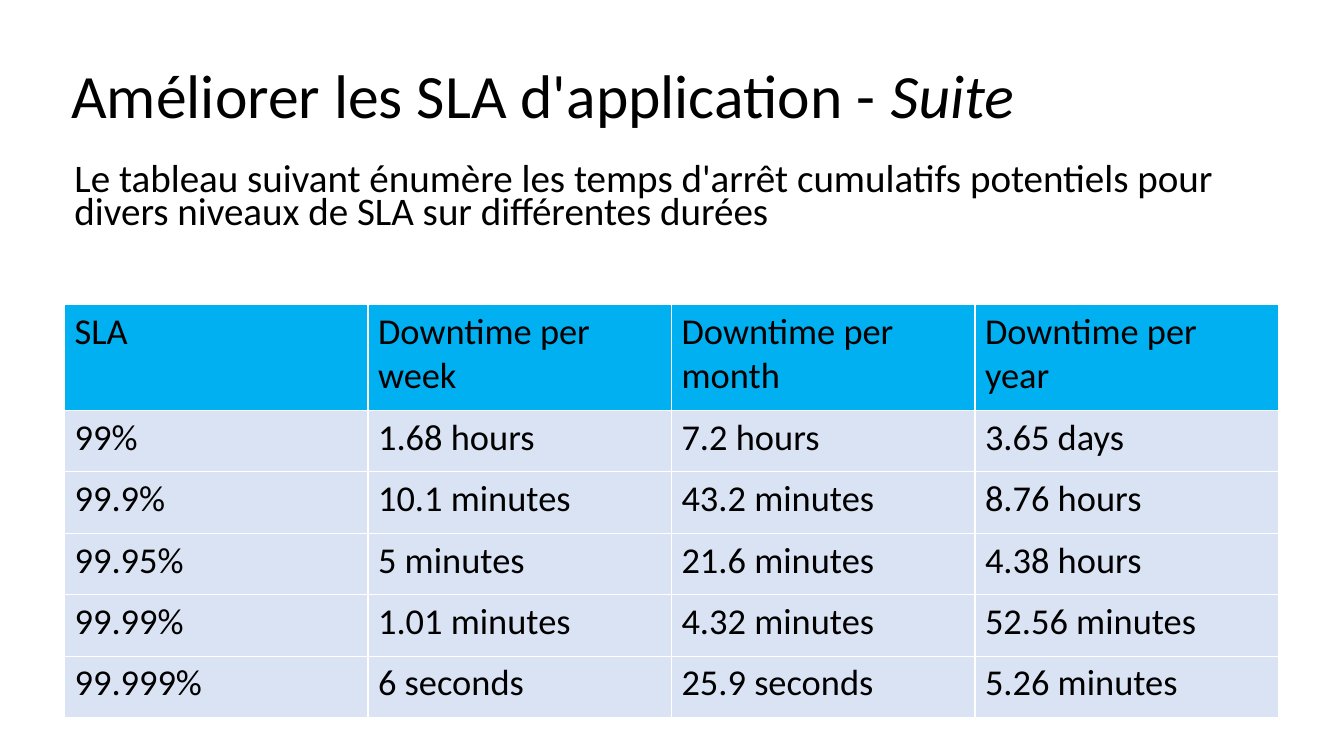
from dataclasses import dataclass

from pptx import Presentation
from pptx.dml.color import RGBColor
from pptx.enum.text import MSO_ANCHOR
from pptx.util import Inches, Pt

TITLE = [("Améliorer les SLA d'application - ", False), ("Suite", True)]
INTRO = [("Le tableau suivant énumère les temps d'arrêt cumulatifs potentiels "
          "pour divers niveaux de SLA sur différentes durées", False)]
ROWS = [
    ("SLA", "Downtime per week", "Downtime per month", "Downtime per year"),
    ("99%", "1.68 hours", "7.2 hours", "3.65 days"),
    ("99.9%", "10.1 minutes", "43.2 minutes", "8.76 hours"),
    ("99.95%", "5 minutes", "21.6 minutes", "4.38 hours"),
    ("99.99%", "1.01 minutes", "4.32 minutes", "52.56 minutes"),
    ("99.999%", "6 seconds", "25.9 seconds", "5.26 minutes"),
]


@dataclass(frozen=True)
class Theme:
    font: str = "Calibri"
    ink: str = "000000"
    head: str = "00B0F0"
    body: str = "DAE3F3"
    title: float = 44
    intro: float = 27.9
    cell: float = 26


THEME = Theme()
WIDE, HIGH = 13.33, 7.5
LEFT, TOP = 0.64, 3.02
TABLE_WIDE = 12.04
HEAD_HIGH, ROW_HIGH = 1.05, 0.61


def write(frame, runs, size, spacing=1.0, before=0, anchor=MSO_ANCHOR.TOP):
    """Fill a text frame with one paragraph of (text, italic) runs."""
    frame.word_wrap = True
    frame.vertical_anchor = anchor
    para = frame.paragraphs[0]
    para.line_spacing = spacing
    para.space_before = Pt(before)
    for text, italic in runs:
        run = para.add_run()
        run.text = text
        font = run.font
        font.name, font.size = THEME.font, Pt(size)
        font.bold, font.italic = False, italic
        font.color.rgb = RGBColor.from_string(THEME.ink)


def add_text(slide, box, runs, size, **style):
    shape = slide.shapes.add_textbox(*map(Inches, box))
    write(shape.text_frame, runs, size, **style)


def add_grid(slide):
    """Add the table; its style draws the white rules between cells."""
    high = HEAD_HIGH + ROW_HIGH * (len(ROWS) - 1)
    box = map(Inches, (LEFT, TOP, TABLE_WIDE, high))
    table = slide.shapes.add_table(len(ROWS), len(ROWS[0]), *box).table
    table.horz_banding = False
    for r, row in enumerate(ROWS):
        table.rows[r].height = Inches(ROW_HIGH if r else HEAD_HIGH)
        for c, text in enumerate(row):
            cell = table.cell(r, c)
            cell.fill.solid()
            shade = THEME.body if r else THEME.head
            cell.fill.fore_color.rgb = RGBColor.from_string(shade)
            write(cell.text_frame, [(text, False)], THEME.cell)


def main():
    deck = Presentation()
    deck.slide_width, deck.slide_height = Inches(WIDE), Inches(HIGH)
    slide = deck.slides.add_slide(deck.slide_layouts[6])
    add_text(slide, (0.61, 0.58, 11.5, 0.8), TITLE, THEME.title,
             spacing=0.9, anchor=MSO_ANCHOR.MIDDLE)
    add_text(slide, (LEFT, 1.6, 11.69, 0.8), INTRO, THEME.intro,
             spacing=0.7, before=10)
    add_grid(slide)
    deck.save("out.pptx")


if __name__ == "__main__":
    main()
